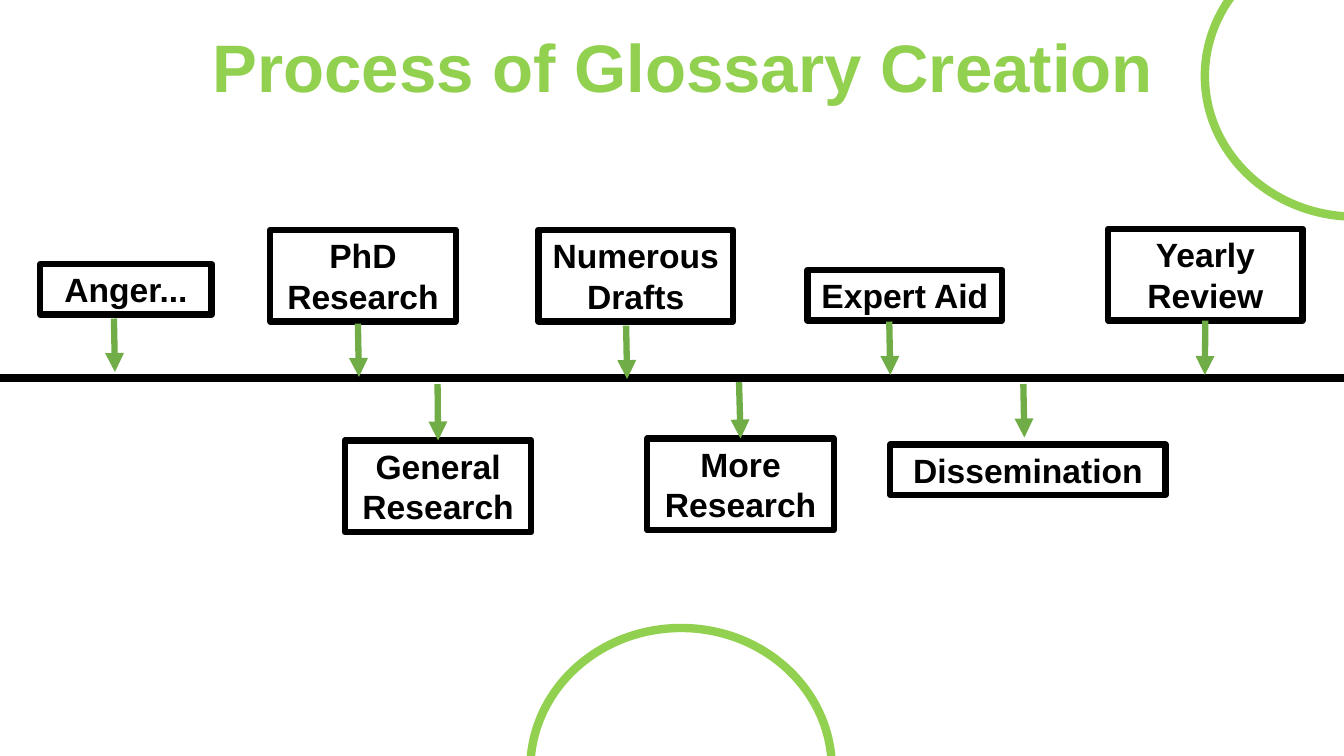
from lxml.etree import SubElement
from pptx import Presentation
from pptx.dml.color import RGBColor
from pptx.enum.shapes import MSO_CONNECTOR, MSO_SHAPE
from pptx.enum.text import MSO_ANCHOR, PP_ALIGN
from pptx.oxml.ns import qn
from pptx.util import Inches, Pt

COLORS = {"lime": "92D050", "arrow": "70AD47", "ink": "000000"}

deck = Presentation()
deck.slide_width, deck.slide_height = Inches(13.33), Inches(7.5)
column, row = deck.slide_width / 133.3, deck.slide_height / 75
page = deck.slides.add_slide(deck.slide_layouts[6])


def write(box, text, size, color, spacing=1.0):
    frame = box.text_frame
    frame.word_wrap = True
    frame.vertical_anchor = MSO_ANCHOR.MIDDLE
    para = frame.paragraphs[0]
    para.alignment = PP_ALIGN.CENTER
    para.line_spacing = spacing
    span = para.add_run()
    span.text = text
    span.font.name = "Arial"
    span.font.size = Pt(size)
    span.font.bold = True
    span.font.color.rgb = RGBColor.from_string(COLORS[color])


def draw_line(x1, y1, x2, y2, color, weight, arrow=False):
    line = page.shapes.add_connector(
        MSO_CONNECTOR.STRAIGHT,
        int(x1 * column), int(y1 * row), int(x2 * column), int(y2 * row))
    line.line.color.rgb = RGBColor.from_string(COLORS[color])
    line.line.width = Pt(weight)
    if arrow:
        SubElement(line.line._get_or_add_ln(), qn("a:tailEnd"), type="triangle")
    SubElement(line._element.spPr, qn("a:effectLst"))
    return line


title = page.shapes.add_textbox(
    int(15 * column), int(-0.2 * row), int(105.5 * column), int(14.5 * row))
write(title, "Process of Glossary Creation", 48, "lime", spacing=0.9)

for left, top in [(52.6, 62.3), (119.5, -6.4)]:
    circle = page.shapes.add_shape(
        MSO_SHAPE.FLOWCHART_CONNECTOR,
        int(left * column), int(top * row), int(29.9 * column), int(27.9 * row))
    circle.shadow.inherit = False
    circle.fill.background()
    circle.line.color.rgb = RGBColor.from_string(COLORS["lime"])
    circle.line.width = Pt(6)

timeline_y = 37.5
draw_line(0, timeline_y, 133.3, timeline_y, "ink", 6)

one_line, two_lines = 5, 9.1
arrow_length, arrow_drift = 5.3, 0.1
steps = [
    ("Anger...", 4, 26.2, 17, one_line, 11.3, 31.6),
    ("PhD Research", 26.8, 22.8, 18.4, two_lines, 35.5, 32.1),
    ("General Research", 34.2, 43.7, 18.5, two_lines, 43.4, 38.1),
    ("Numerous Drafts", 53.4, 22.8, 19.3, two_lines, 62.1, 32.3),
    ("More Research", 64.2, 43.5, 18.5, two_lines, 73.3, 37.9),
    ("Expert Aid", 80.1, 26.8, 19.3, one_line, 88.2, 31.9),
    ("Dissemination", 88.3, 44.1, 27.3, one_line, 101.5, 38.1),
    ("Yearly Review", 109.9, 22.7, 19.3, two_lines, 119.4, 31.9),
]
for label, left, top, width, height, arrow_x, arrow_top in steps:
    box = page.shapes.add_shape(
        MSO_SHAPE.RECTANGLE,
        int(left * column), int(top * row), int(width * column), int(height * row))
    box.shadow.inherit = False
    box.fill.background()
    box.line.color.rgb = RGBColor.from_string(COLORS["ink"])
    box.line.width = Pt(4.5)
    write(box, label, 24, "ink")

    arrow = draw_line(arrow_x, arrow_top, arrow_x + arrow_drift,
                      arrow_top + arrow_length, "arrow", 4.5, arrow=True)
    centered = abs(left + width / 2 - arrow_x) < 0.2
    if centered and top < timeline_y:
        arrow.begin_connect(box, 2)
    elif centered:
        arrow.end_connect(box, 0)

deck.save("out.pptx")
